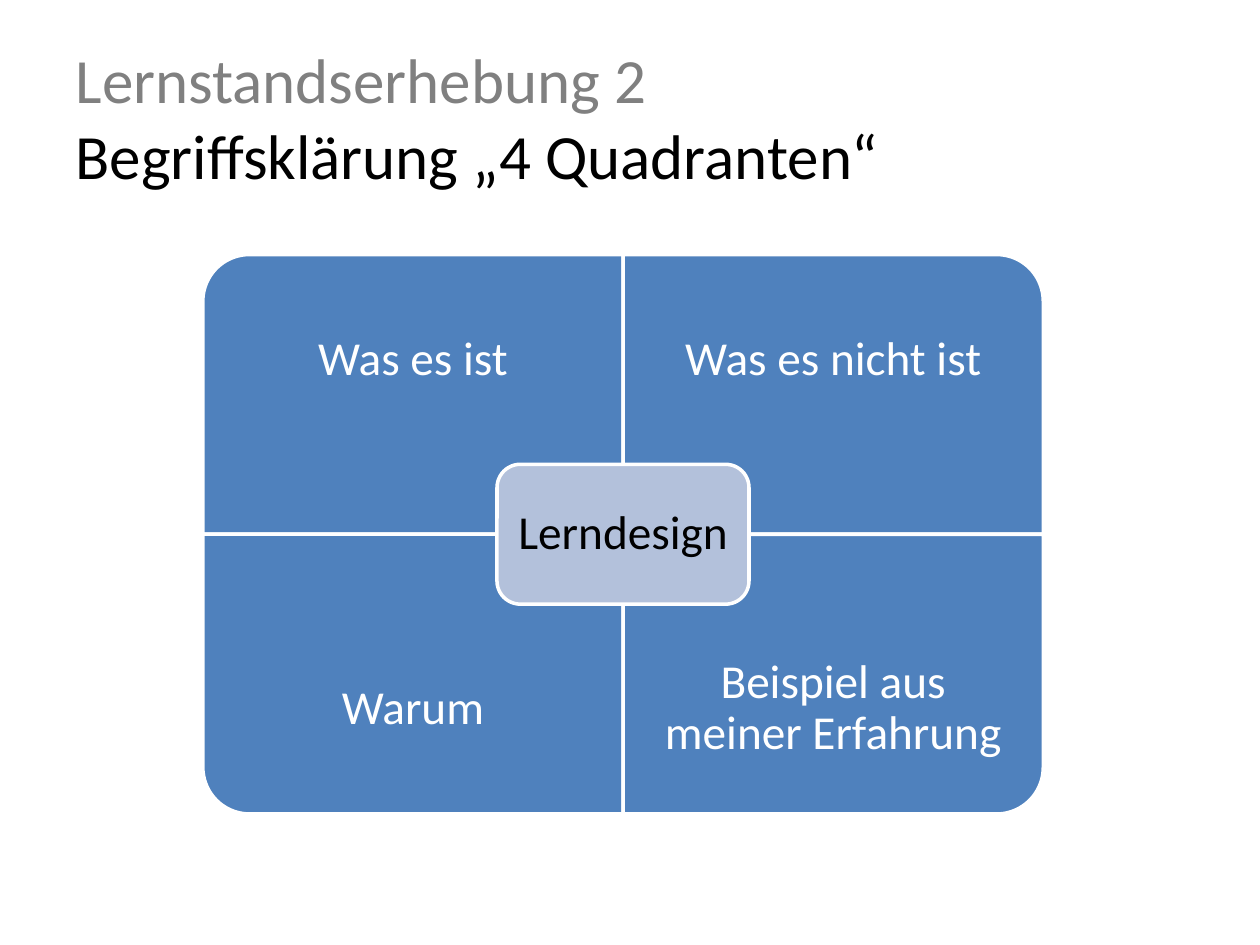
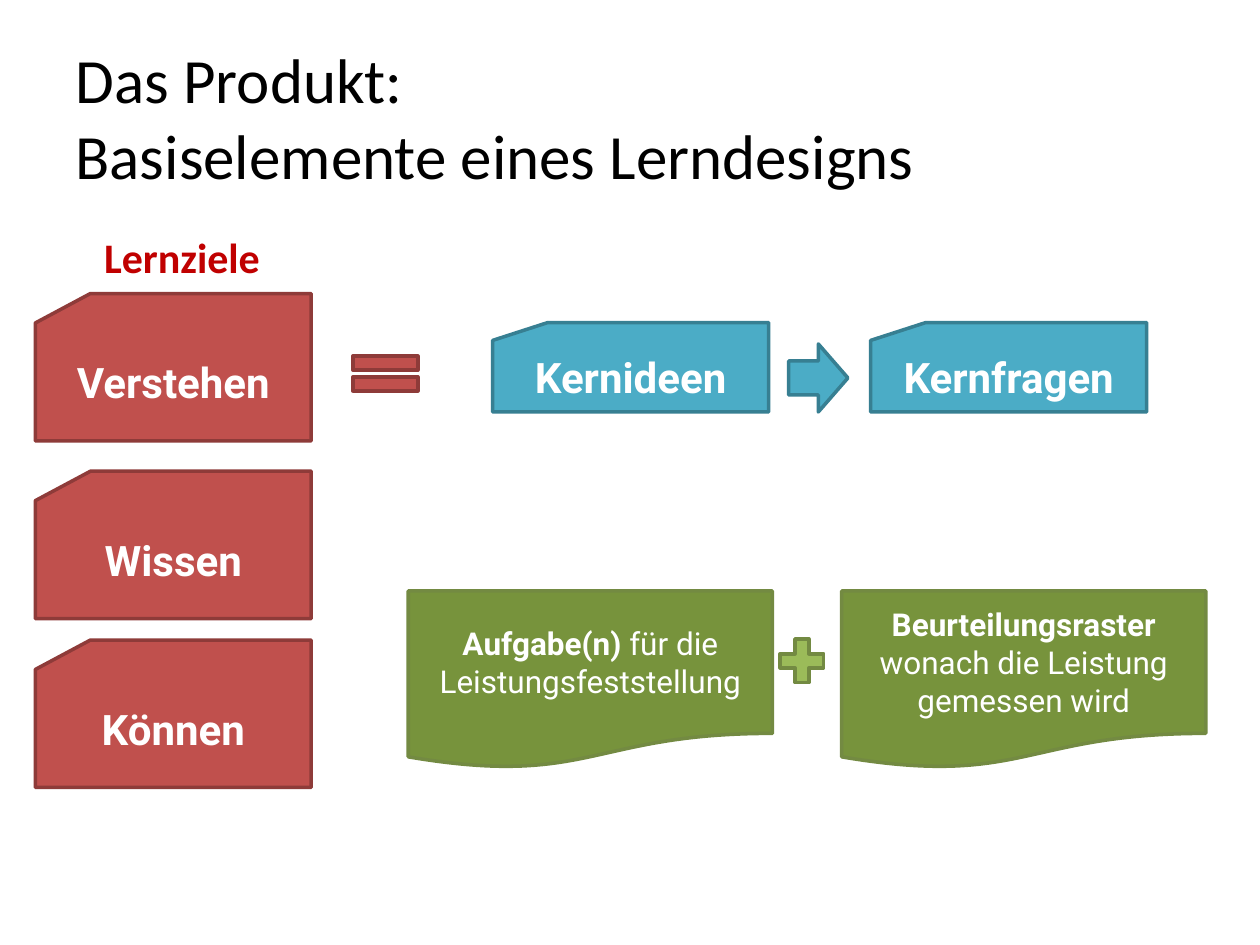
from pptx import Presentation
from pptx import util as u
from pptx.dml.color import RGBColor
from pptx.enum import shapes, text

SHAPE = shapes.MSO_SHAPE
CENTER = text.PP_ALIGN.CENTER
MIDDLE = text.MSO_ANCHOR.MIDDLE

# Shared colours (fill, line) and text formats
BLUE = ("4F81BD", "FFFFFF")
PALE = ("B3C1DB", "FFFFFF")
RED = ("C0504D", "8E3B39")
TEAL = ("4BACC6", "377F92")
GREEN = ("77933C", "738A42")
LIGHT_GREEN = ("9BBB59", "738A42")
TITLE = {"name": "Calibri", "size": u.Pt(36), "bold": False}
QUADRANT = {"name": "Calibri", "size": u.Pt(27), "bold": False}
HEADING = {"name": "Calibri", "size": u.Pt(24), "bold": True}
CARD = {"name": "Roboto", "size": u.Pt(24), "bold": True}
NOTE = {"name": "Roboto", "size": u.Pt(18), "bold": False}
NOTE_BOLD = {**NOTE, "bold": True}

# Slide 1 content
QUADRANT_TITLE = [("Lernstandserhebung 2", "808080"),
                  ("Begriffsklärung „4 Quadranten“", "000000")]
QUADRANTS = [  # column, row, rotation of the rounded corner, label
    (0, 0, 270, "Was es ist"),
    (1, 0, 0, "Was es nicht ist"),
    (0, 1, 180, "Warum"),
    (1, 1, 90, "Beispiel aus meiner Erfahrung"),
]
CENTRE_LABEL = "Lerndesign"

# Slide 2 content
PRODUCT_TITLE = [("Das Produkt:", "000000"),
                 ("Basiselemente eines Lerndesigns", "000000")]
GOALS_HEADING = "Lernziele"
GOALS = [("Verstehen", 2.33), ("Wissen", 3.74), ("Können", 5.08)]
CORE_CARDS = ["Kernideen", "Kernfragen"]
DOCUMENTS = [("Aufgabe(n)", " für die Leistungsfeststellung"),
             ("Beurteilungsraster", " wonach die Leistung gemessen wird")]
SYMBOLS = [
    (SHAPE.MATH_PLUS, (6.13, 5.01, 0.47, 0.47), LIGHT_GREEN),
    (SHAPE.MATH_EQUAL, (2.71, 2.73, 0.7, 0.47), RED),
    (SHAPE.RIGHT_ARROW, (6.26, 2.73, 0.47, 0.54), TEAL),
]


def color(value):
    return RGBColor.from_string(value)


def inches(box):
    return [u.Inches(length) for length in box]


def add_run(paragraph, words, style, hue):
    run = paragraph.add_run()
    run.text = words
    for key, value in style.items():
        setattr(run.font, key, value)
    run.font.color.rgb = color(hue)


def write_centred(frame, runs, hue="FFFFFF"):
    """Fill a text frame with one centred paragraph of (words, style) runs."""
    frame.word_wrap = True
    paragraph = frame.paragraphs[0]
    paragraph.alignment = CENTER
    for words, style in runs:
        add_run(paragraph, words, style, hue)
    return paragraph


def add_figure(slide, kind, box, colours, runs=(), rotation=0):
    shape = slide.shapes.add_shape(kind, *inches(box))
    shape.shadow.inherit = False
    shape.rotation = rotation
    fill, line = colours
    shape.fill.solid()
    shape.fill.fore_color.rgb = color(fill)
    shape.line.color.rgb = color(line)
    shape.line.width = u.Pt(2)
    if runs:
        shape.text_frame.vertical_anchor = MIDDLE
        write_centred(shape.text_frame, runs)


def add_label(slide, box, words, style, hue, inset=None):
    frame = slide.shapes.add_textbox(*inches(box)).text_frame
    paragraph = write_centred(frame, [(words, style)], hue)
    if inset is not None:
        frame.vertical_anchor = MIDDLE
        paragraph.line_spacing = 0.9
        for side in ("left", "top", "right", "bottom"):
            setattr(frame, f"margin_{side}", u.Inches(inset))


def add_titled_slide(presentation, lines):
    slide = presentation.slides.add_slide(presentation.slide_layouts[5])
    title = slide.shapes.title
    title.left, title.top, title.width, title.height = inches((0.5, 0.3, 7.18, 1.25))
    title.text_frame.vertical_anchor = MIDDLE
    paragraph = title.text_frame.paragraphs[0]
    paragraph.alignment = text.PP_ALIGN.LEFT
    for index, (words, hue) in enumerate(lines):
        if index:
            paragraph.add_line_break()
        add_run(paragraph, words, TITLE, hue)
    return slide


def build_quadrants(presentation):
    slide = add_titled_slide(presentation, QUADRANT_TITLE)
    left, top, width, height, label_height = 1.61, 2.02, 3.335, 2.22, 1.67

    # Four quadrants, each with its rounded corner outwards
    for column, row, rotation, words in QUADRANTS:
        x, y = left + column * width, top + row * height
        box = (x, y, width, height)
        if rotation % 180:  # sideways shapes swap their sides about the centre
            shift = (width - height) / 2
            box = (x + shift, y - shift, height, width)
        add_figure(slide, SHAPE.ROUND_1_RECTANGLE, box, BLUE, rotation=rotation)
        label_top = y + row * (height - label_height)
        add_label(slide, (x, label_top, width, label_height), words,
                  QUADRANT, "FFFFFF", 0.21)

    # Centre card over the crossing
    card_width, card_height = 2, 1.11
    card = (left + width - card_width / 2, top + height - card_height / 2,
            card_width, card_height)
    add_figure(slide, SHAPE.ROUNDED_RECTANGLE, card, PALE)
    margin = 0.055
    add_label(slide, (card[0] + margin, card[1] + margin,
                      card_width - 2 * margin, card_height - 2 * margin),
              CENTRE_LABEL, QUADRANT, "000000", 0.11)


def build_product(presentation):
    slide = add_titled_slide(presentation, PRODUCT_TITLE)

    # Learning goals
    add_label(slide, (0.43, 1.79, 2.03, 0.5), GOALS_HEADING, HEADING, "C00000")
    for words, top in GOALS:
        add_figure(slide, SHAPE.FLOWCHART_CARD, (0.28, top, 2.19, 1.17), RED,
                   [(words, CARD)])

    # Core ideas and questions
    for index, words in enumerate(CORE_CARDS):
        add_figure(slide, SHAPE.FLOWCHART_CARD, (3.91 + index * 3, 2.56, 2.19, 0.71),
                   TEAL, [(words, CARD)])

    # Task and assessment documents
    for index, (lead, rest) in enumerate(DOCUMENTS):
        add_figure(slide, SHAPE.FLOWCHART_DOCUMENT,
                   (3.24 + index * 3.44, 4.69, 2.89, 1.41), GREEN,
                   [(lead, NOTE_BOLD), (rest, NOTE)])

    # Symbols between the parts
    for kind, box, colours in SYMBOLS:
        add_figure(slide, kind, box, colours)


def main():
    presentation = Presentation()
    presentation.slide_width, presentation.slide_height = inches((10, 7.5))
    build_quadrants(presentation)
    build_product(presentation)
    presentation.save("out.pptx")


if __name__ == "__main__":
    main()
